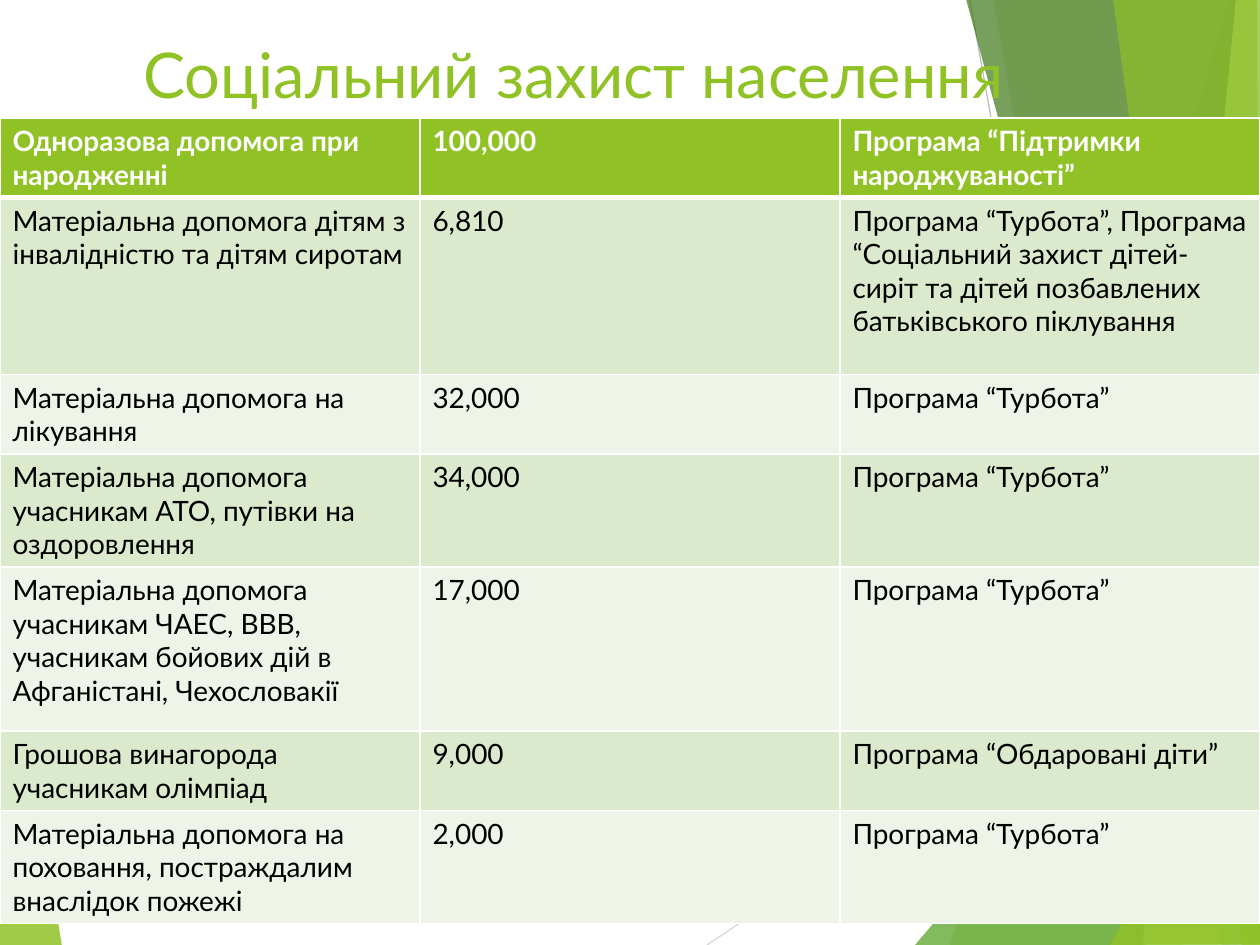
from lxml import etree
from pptx import Presentation
from pptx.dml.color import RGBColor
from pptx.enum.shapes import MSO_CONNECTOR
from pptx.enum.text import MSO_ANCHOR, PP_ALIGN
from pptx.oxml.ns import qn
from pptx.util import Emu, Pt

STRAIGHT = MSO_CONNECTOR.STRAIGHT
TOP = MSO_ANCHOR.TOP
CENTER = PP_ALIGN.CENTER
PX = 914400 / 126
TITLE_ONLY = 5

THEME = {
    "font": "Lato",
    "green": "90C226",
    "leaf": "54A021",
    "forest": "3F7819",
    "lime": "C0E474",
    "white": "FFFFFF",
    "black": "000000",
    "bands": ("EEF4E8", "DBE9CD"),
    "title_size": Pt(36),
    "cell_size": Pt(16),
}


def px(value):
    return Emu(round(value * PX))


def format_text(paragraph, size, color, bold):
    values = {"name": THEME["font"], "size": size, "bold": bold}
    for name, value in values.items():
        setattr(paragraph.runs[0].font, name, value)
    paragraph.runs[0].font.color.rgb = RGBColor.from_string(color)


presentation = Presentation()
presentation.slide_width = px(1260)
presentation.slide_height = px(945)
slide = presentation.slides.add_slide(presentation.slide_layouts[TITLE_ONLY])

rays = [
    ((707, 945), (1261, 576), "D9D9D9"),
    ((970, 0), (1139, 945), "BFBFBF"),
]
for start, end, color in rays:
    ray = slide.shapes.add_connector(STRAIGHT, *map(px, start + end))
    ray.line.color.rgb = RGBColor.from_string(color)
    ray.line.width = Pt(0.75)
    etree.SubElement(ray.element.spPr, qn("a:effectLst"))

facets = [
    ([(-1, 553), (62, 946), (-1, 945)], "green", 85),
    ([(1229, 0), (950, 945), (1262, 946), (1261, 1)], "green", 30),
    ([(993, -1), (1158, 945), (1261, 945), (1261, -1)], "green", 20),
    ([(915, 945), (1260, 541), (1261, 945)], "leaf", 72),
    ([(966, -1), (1222, 945), (1261, 944), (1261, -1)], "forest", 70),
    ([(1236, -1), (1143, 945), (1261, 945), (1260, -1)], "lime", 70),
    ([(1113, -1), (1242, 945), (1260, 945), (1257, -1)], "green", 65),
    ([(1110, 945), (1261, 674), (1261, 944)], "green", 80),
]
for points, color, opacity in facets:
    builder = slide.shapes.build_freeform(*points[0], scale=PX)
    builder.add_line_segments(points[1:], close=True)
    facet = builder.convert_to_shape()
    facet.shadow.inherit = False
    facet.line.fill.background()
    facet.fill.solid()
    facet.fill.fore_color.rgb = RGBColor.from_string(THEME[color])
    fill_color = facet.element.spPr.find(qn("a:solidFill"))[0]
    etree.SubElement(fill_color, qn("a:alpha"), val=str(opacity * 1000))

title = slide.shapes.title
title.element.getparent().append(title.element)
title_box = {"left": 84, "top": 29, "width": 979, "height": 178}
for name, value in title_box.items():
    setattr(title, name, px(value))
title.text_frame.text = "Соціальний захист населення"
title.text_frame.vertical_anchor = TOP
title_paragraph = title.text_frame.paragraphs[0]
title_paragraph.alignment = CENTER
format_text(title_paragraph, THEME["title_size"], THEME["green"], False)

care = "Програма “Турбота”"
rows = [
    (79, "Одноразова допомога при народженні", "100,000",
     "Програма “Підтримки народжуваності”"),
    (177, "Матеріальна допомога дітям з інвалідністю та дітям сиротам", "6,810",
     care + ", Програма “Соціальний захист дітей-сиріт та дітей "
     "позбавлених батьківського піклування"),
    (79, "Матеріальна допомога на лікування", "32,000", care),
    (113, "Матеріальна допомога учасникам АТО, путівки на оздоровлення",
     "34,000", care),
    (164, "Матеріальна допомога учасникам ЧАЕС, ВВВ, учасникам бойових дій "
     "в Афганістані, Чехословакії", "17,000", care),
    (79, "Грошова винагорода учасникам олімпіад", "9,000",
     "Програма “Обдаровані діти”"),
    (113, "Матеріальна допомога на поховання, постраждалим внаслідок пожежі",
     "2,000", care),
]
table_height = sum(row[0] for row in rows)
table = slide.shapes.add_table(
    len(rows), 3, px(0), px(118), px(1260), px(table_height)
).table
for column in table.columns:
    column.width = px(420)

for row_index, (height, *texts) in enumerate(rows):
    table.rows[row_index].height = px(height)
    header = row_index == 0
    fill = THEME["green"] if header else THEME["bands"][row_index % 2]
    text_color = THEME["white"] if header else THEME["black"]
    borders = {
        "a:lnL": 1,
        "a:lnR": 1,
        "a:lnT": 3 if row_index == 1 else 1,
        "a:lnB": 3 if header else 1,
    }
    for column_index, text in enumerate(texts):
        cell = table.cell(row_index, column_index)
        cell.text = text
        format_text(cell.text_frame.paragraphs[0], THEME["cell_size"],
                    text_color, header)
        properties = cell._tc.get_or_add_tcPr()
        for tag, width in borders.items():
            border = etree.SubElement(properties, qn(tag), w=str(Pt(width)))
            border_fill = etree.SubElement(border, qn("a:solidFill"))
            etree.SubElement(border_fill, qn("a:srgbClr"), val=THEME["white"])
        cell.fill.solid()
        cell.fill.fore_color.rgb = RGBColor.from_string(fill)

presentation.save("out.pptx")
